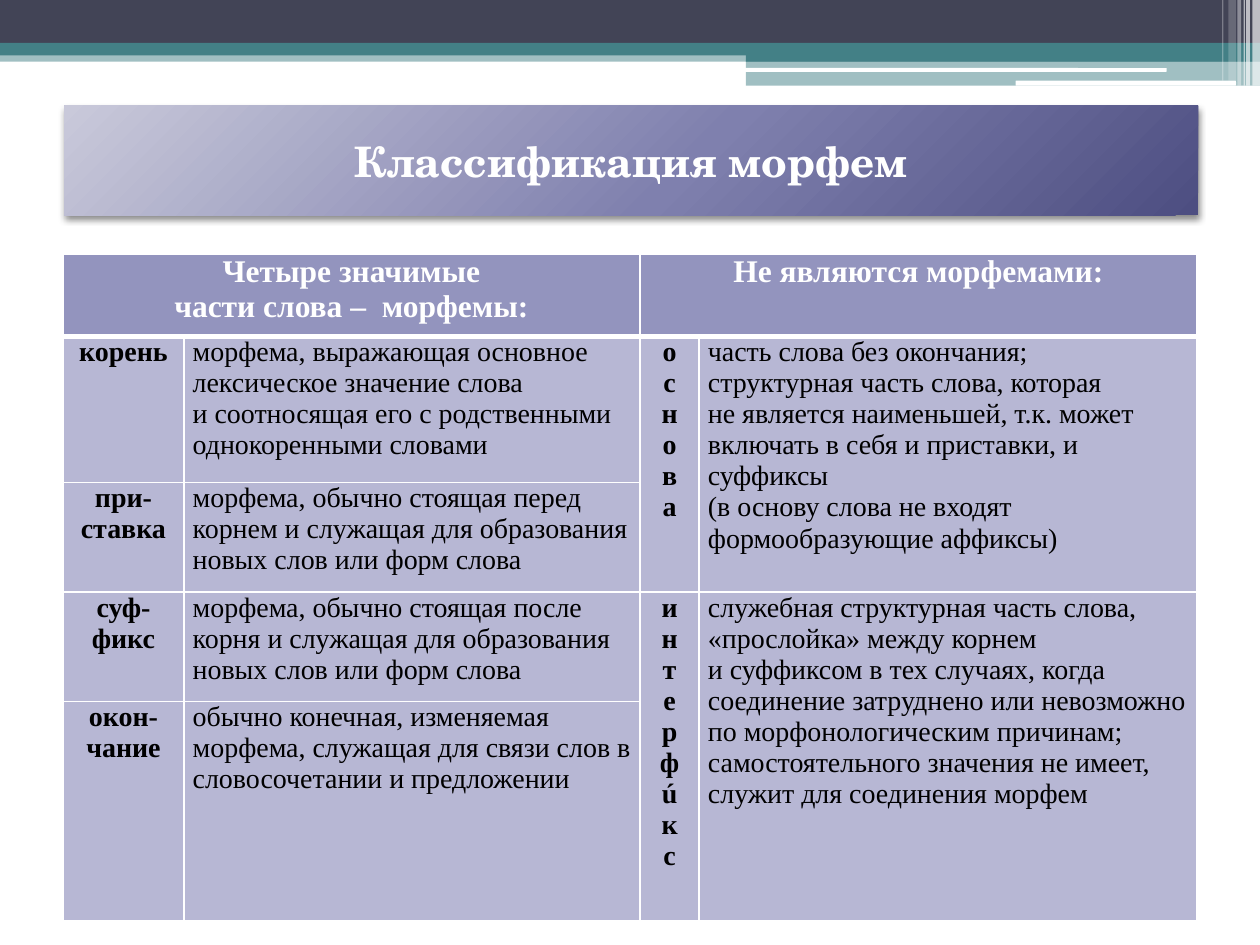
from lxml import etree
from pptx import Presentation
from pptx import util as u
from pptx.dml.color import RGBColor
from pptx.enum import shapes, text
from pptx.oxml import parse_xml
from pptx.oxml.ns import qn

WHITE = RGBColor(0xFF, 0xFF, 0xFF)
BLACK = RGBColor(0, 0, 0)
DARK = RGBColor(0x42, 0x44, 0x56)
TEAL = RGBColor(0x43, 0x80, 0x86)
HEAD = RGBColor(0x93, 0x94, 0xBE)
BODY = RGBColor(0xB7, 0xB7, 0xD4)
NS = 'xmlns:a="http://schemas.openxmlformats.org/drawingml/2006/main"'
RECT = shapes.MSO_SHAPE.RECTANGLE
ROUND = shapes.MSO_SHAPE.ROUNDED_RECTANGLE

deck = Presentation()
deck.slide_width, deck.slide_height = u.Inches(10), u.Inches(7.5)
page = deck.slides.add_slide(deck.slide_layouts[6])


def block(kind, box, color, alpha=100):
    """Add a borderless shape with a fill of the given opacity in percent."""
    item = page.shapes.add_shape(kind, *[u.Inches(n) for n in box])
    item.shadow.inherit = False
    item.line.fill.background()
    item.fill.solid()
    item.fill.fore_color.rgb = color
    if alpha < 100:
        tint = item.fill._xPr.find(qn("a:solidFill"))[0]
        etree.SubElement(tint, qn("a:alpha"), val=str(alpha * 1000))
    return item


def style(frame, font, size, color, bold, align):
    for para in frame.paragraphs:
        para.alignment = align
        for run in para.runs:
            run.font.name, run.font.size = font, u.Pt(size)
            run.font.bold = bold
            run.font.color.rgb = color


# Bands across the top
block(RECT, (0, 0.4, 10, 0.09), TEAL, 50)
block(RECT, (0, 0, 10, 0.34), DARK)
block(RECT, (0, 0.34, 10, 0.1), TEAL)
block(RECT, (5.92, 0.39, 4.08, 0.1), TEAL)
block(RECT, (5.92, 0.48, 4.08, 0.2), TEAL, 50)
block(ROUND, (5.91, 0.54, 3.35, 0.03), WHITE)
block(ROUND, (8.06, 0.64, 1.75, 0.04), WHITE)

# Pale stripes in the corner: left, width, height, opacity
for left, width, tall, alpha in [
    (9.94, 0.06, 0.68, 65), (9.89, 0.03, 0.68, 65), (9.87, 0.01, 0.68, 60),
    (9.82, 0.03, 0.68, 40), (9.75, 0.06, 0.64, 20), (9.7, 0.01, 0.64, 30),
]:
    block(RECT, (left, 0, width, tall), WHITE, alpha)

# Title plate
title = block(RECT, (0.51, 0.84, 9, 0.87), HEAD)
stops = "".join(
    f'<a:gs pos="{pos * 1000}"><a:srgbClr val="{tone}"/></a:gs>'
    for pos, tone in [(0, "C9C9DA"), (55, "7F80AE"), (100, "4D4E81")]
)
props = title.fill._xPr
props.replace(props.find(qn("a:solidFill")), parse_xml(
    f'<a:gradFill {NS} rotWithShape="1"><a:gsLst>{stops}</a:gsLst><a:path path="circle">'
    '<a:fillToRect l="-40000" t="-90000" r="140000" b="190000"/></a:path></a:gradFill>'))
props.replace(props.find(qn("a:effectLst")), parse_xml(
    f'<a:effectLst {NS}><a:outerShdw blurRad="{u.Pt(4)}" dist="{u.Pt(2)}" dir="5400000" '
    'rotWithShape="0"><a:srgbClr val="000000"><a:alpha val="45000"/></a:srgbClr>'
    '</a:outerShdw></a:effectLst>'))
title.text_frame.text = "Классификация морфем"
title.text_frame.vertical_anchor = text.MSO_ANCHOR.MIDDLE
style(title.text_frame, "TeX Gyre Schola", 24, WHITE, True, text.PP_ALIGN.CENTER)

# Table of morphemes; None marks a cell that a neighbour covers
rows = [
    ["Четыре значимые\nчасти слова –  морфемы:", None, "Не являются морфемами:", None],
    ["корень",
     "морфема, выражающая основное лексическое значение слова\n"
     "и соотносящая его с родственными однокоренными словами",
     "\n".join("основа"),
     "часть слова без окончания;\nструктурная часть слова, которая\n"
     "не является наименьшей, т.к. может включать в себя и приставки, и суффиксы\n"
     "(в основу слова не входят формообразующие аффиксы)"],
    ["при-ставка",
     "морфема, обычно стоящая перед корнем и служащая для образования "
     "новых слов или форм слова", None, None],
    ["суф-фикс",
     "морфема, обычно стоящая после корня и служащая для образования "
     "новых слов или форм слова",
     "\n".join("интерфúкс"),
     "служебная структурная часть слова, «прослойка» между корнем\n"
     "и суффиксом в тех случаях, когда соединение затруднено или невозможно "
     "по морфонологическим причинам;\n"
     "самостоятельного значения не имеет, служит для соединения морфем"],
    ["окон-чание",
     "обычно конечная, изменяемая морфема, служащая для связи слов "
     "в словосочетании и предложении", None, None],
]
widths = [0.96, 3.62, 0.47, 3.95]
talls = [0.65, 1.16, 0.87, 0.87, 1.74]
grid = page.shapes.add_table(
    len(rows), len(widths), u.Inches(0.5), u.Inches(2.02),
    u.Inches(sum(widths)), u.Inches(sum(talls))).table
for col, width in zip(grid.columns, widths):
    col.width = u.Inches(width)
for row, tall in zip(grid.rows, talls):
    row.height = u.Inches(tall)

for r, words in enumerate(rows):
    for c, word in enumerate(words):
        cell = grid.cell(r, c)
        cell.margin_left = cell.margin_right = u.Inches(0.07)
        cell.margin_top = cell.margin_bottom = 0
        cell.fill.solid()
        cell.fill.fore_color.rgb = BODY if r else HEAD
        for n, side in enumerate("LRTB"):
            thick = 3 if (r, side) in [(0, "B"), (1, "T")] else 1
            cell._tc.tcPr.insert(n, parse_xml(
                f'<a:ln{side} {NS} w="{u.Pt(thick)}"><a:solidFill>'
                f'<a:srgbClr val="{WHITE}"/></a:solidFill></a:ln{side}>'))
        if word:
            cell.text_frame.text = word
            label = r == 0 or c % 2 == 0
            style(cell.text_frame, "Times New Roman", 16 if r else 18,
                  BLACK if r else WHITE, label,
                  text.PP_ALIGN.CENTER if label else text.PP_ALIGN.LEFT)

for c in (0, 2):
    grid.cell(0, c).merge(grid.cell(0, c + 1))
for r in (1, 3):
    for c in (2, 3):
        grid.cell(r, c).merge(grid.cell(r + 1, c))

deck.save("out.pptx")
